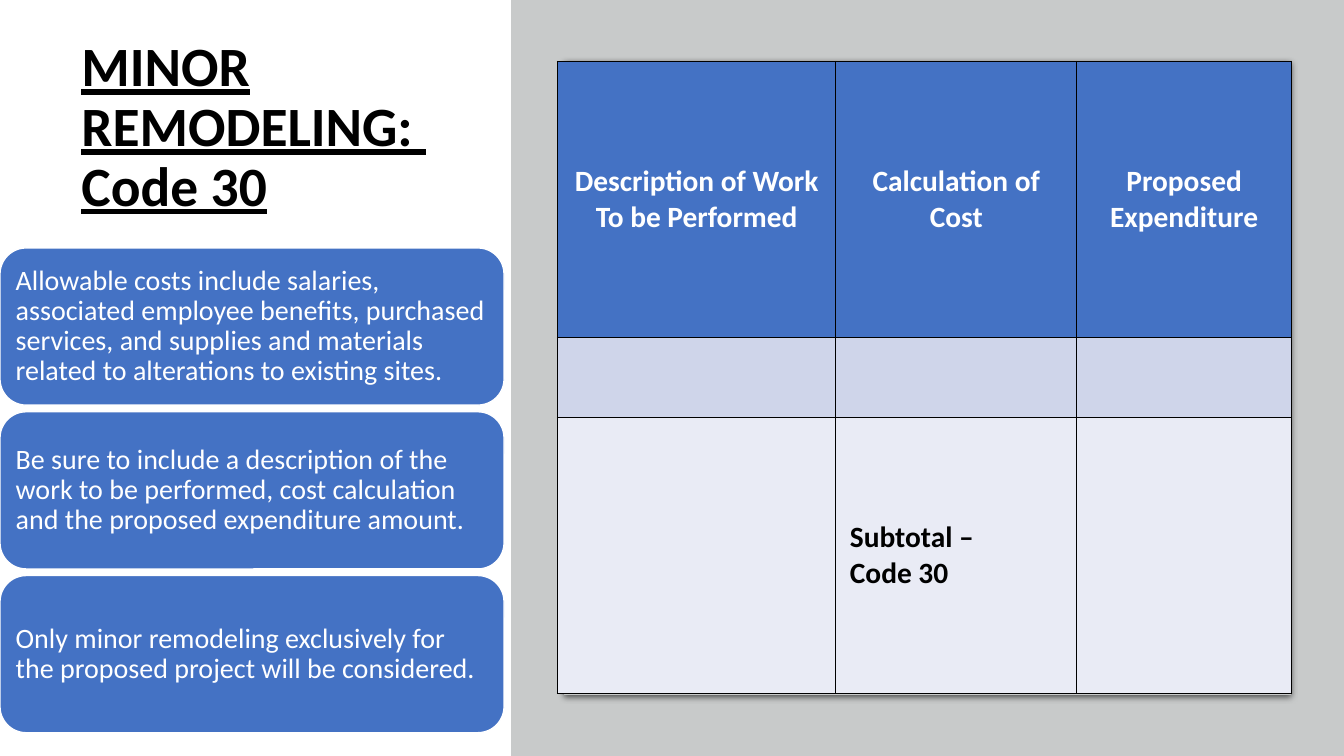
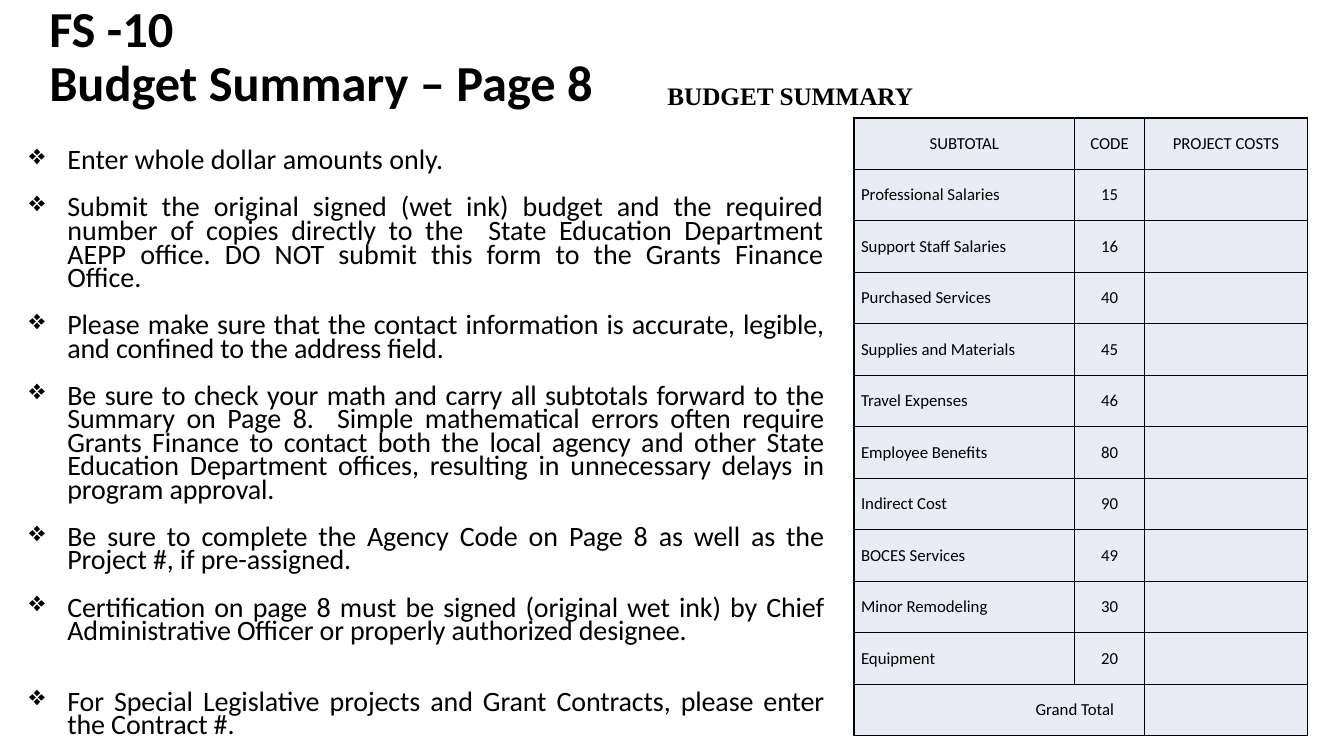
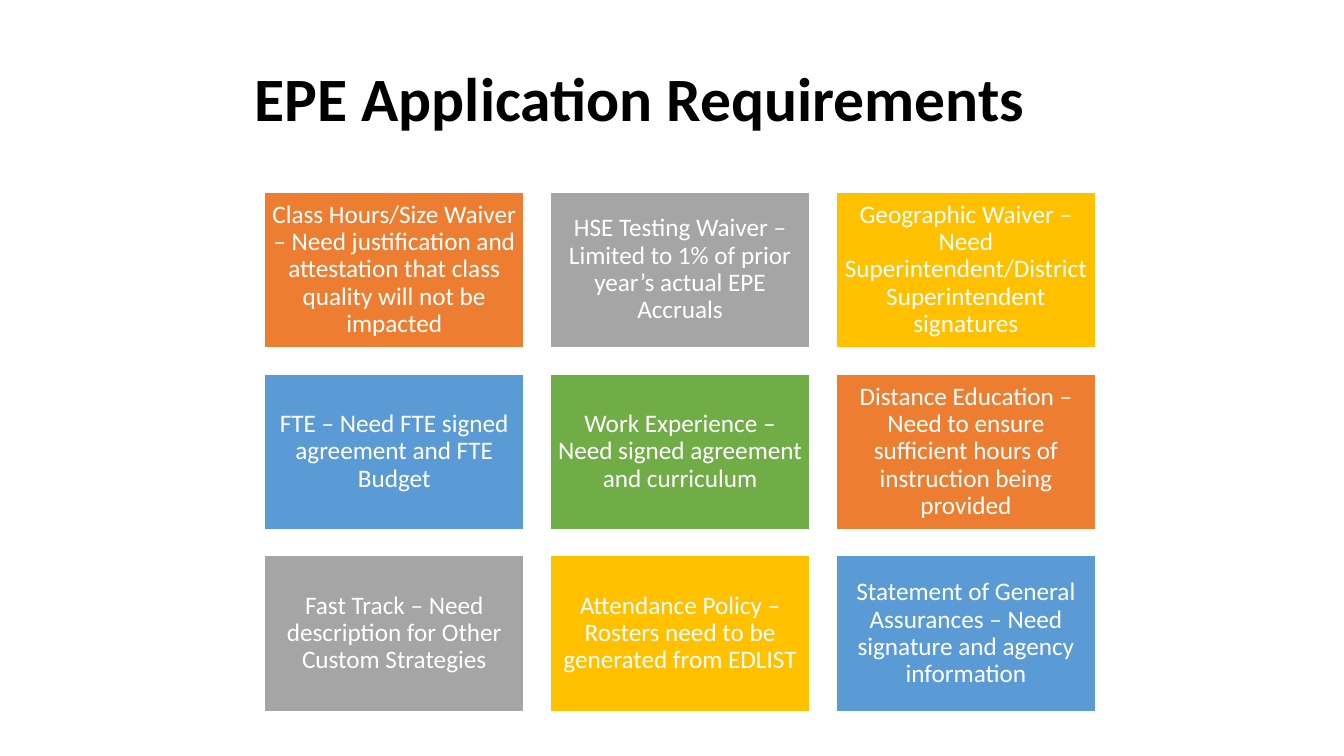
from dataclasses import dataclass
from typing import Any

from lxml import etree
from pptx import Presentation
from pptx.dml import color
from pptx.enum import shapes, text
from pptx.oxml import ns
from pptx.util import Inches, Pt

LEFT, MID, RIGHT, FULL = (
    text.PP_ALIGN.LEFT, text.PP_ALIGN.CENTER, text.PP_ALIGN.RIGHT, text.PP_ALIGN.JUSTIFY)
TOP, CENTER, LOW = (
    text.MSO_ANCHOR.TOP, text.MSO_ANCHOR.MIDDLE, text.MSO_ANCHOR.BOTTOM)
RECT = shapes.MSO_SHAPE.RECTANGLE
ROUND = shapes.MSO_SHAPE.ROUNDED_RECTANGLE


@dataclass(frozen=True)
class Theme:
    font: str = "Calibri"
    serif: str = "Times New Roman"
    black: str = "000000"
    white: str = "FFFFFF"
    panel: str = "C8CACA"
    blue: str = "4472C4"
    band: str = "CFD5EA"
    pale: str = "E9EBF5"
    orange: str = "ED7D31"
    gray: str = "A5A5A5"
    gold: str = "FFC000"
    sky: str = "5B9BD5"
    green: str = "70AD47"
    body: float = 20
    head: float = 21
    label: float = 18
    small: float = 12


T = Theme()


@dataclass(frozen=True)
class Box:
    x: float
    y: float
    w: float
    h: float

    def place(self) -> tuple[int, ...]:
        return tuple(Inches(n) for n in (self.x, self.y, self.w, self.h))


@dataclass(frozen=True)
class Tile:
    words: str
    fill: str


@dataclass(frozen=True)
class Point:
    words: str
    after: float = 16.8
    track: int = -10


@dataclass(frozen=True)
class Cost:
    name: str
    code: str


CARDS = [
    "Allowable costs include salaries, associated employee benefits, purchased services, "
    "and supplies and materials related to alterations to existing sites.",
    "Be sure to include a description of the work to be performed, cost calculation "
    "and the proposed expenditure amount.",
    "Only minor remodeling exclusively for the proposed project will be considered.",
]
HEADS = ["Description of Work\nTo be Performed", "Calculation of\nCost",
         "Proposed\nExpenditure"]
POINTS = [
    Point("Enter whole dollar amounts only.", track=0),
    Point("Submit the original signed (wet ink) budget and the required number of copies "
          "directly to the  State Education Department AEPP office. DO NOT submit this form "
          "to the Grants Finance Office.", track=0),
    Point("Please make sure that the contact information is accurate, legible, and confined "
          "to the address field."),
    Point("Be sure to check your math and carry all subtotals forward to the Summary on "
          "Page 8.  Simple mathematical errors often require Grants Finance to contact both "
          "the local agency and other State Education Department offices, resulting in "
          "unnecessary delays in program approval."),
    Point("Be sure to complete the Agency Code on Page 8 as well as the Project #, "
          "if pre-assigned."),
    Point("Certification on page 8 must be signed (original wet ink) by Chief "
          "Administrative Officer or properly authorized designee.", after=33.6),
    Point("For Special Legislative projects and Grant Contracts, please enter "
          "the Contract #.", after=0),
]
COSTS = [
    Cost("Professional Salaries", "15"),
    Cost("Support Staff Salaries", "16"),
    Cost("Purchased Services", "40"),
    Cost("Supplies and Materials", "45"),
    Cost("Travel Expenses", "46"),
    Cost("Employee Benefits", "80"),
    Cost("Indirect Cost", "90"),
    Cost("BOCES Services", "49"),
    Cost("Minor Remodeling", "30"),
    Cost("Equipment", "20"),
]
TILES = [
    Tile("Class Hours/Size Waiver – Need justification and attestation that class quality "
         "will not be impacted", T.orange),
    Tile("HSE Testing Waiver – Limited to 1% of prior year’s actual EPE Accruals", T.gray),
    Tile("Geographic Waiver – Need Superintendent/District Superintendent signatures", T.gold),
    Tile("FTE – Need FTE signed agreement and FTE Budget", T.sky),
    Tile("Work Experience – Need signed agreement and curriculum", T.green),
    Tile("Distance Education – Need to ensure sufficient hours of instruction being provided",
         T.orange),
    Tile("Fast Track – Need description for Other Custom Strategies", T.gray),
    Tile("Attendance Policy – Rosters need to be generated from EDLIST", T.gold),
    Tile("Statement of General Assurances – Need signature and agency information", T.sky),
]


def rgb(code: str) -> color.RGBColor:
    return color.RGBColor.from_string(code)


def node(base: Any, tag: str, **attrs: Any) -> Any:
    """Append a child in the drawing namespace."""
    return etree.SubElement(base, ns.qn(f"a:{tag}"), {k: str(v) for k, v in attrs.items()})


def write(frame: Any, words: str, *, size: float, tint: str = T.black, font: str = T.font,
          bold: bool = False, line: bool = False, align: Any = LEFT, lead: float = 1.0,
          after: float = 0, track: int = 0, more: bool = False) -> Any:
    """Write one paragraph per newline (a vertical tab breaks a line); return the last."""
    for i, part in enumerate(words.split("\n")):
        para = frame.add_paragraph() if more or i else frame.paragraphs[0]
        para.text = part
        para.alignment, para.line_spacing = align, lead
        para.space_before, para.space_after = Pt(0), Pt(after)
        for run in para.runs:
            run.font.name, run.font.size = font, Pt(size)
            run.font.bold, run.font.underline = bold, line
            run.font.color.rgb = rgb(tint)
            if track:
                run.font._element.set("spc", str(track))
    return para


def frame(slide: Any, box: Box, anchor: Any = TOP) -> Any:
    area = slide.shapes.add_textbox(*box.place()).text_frame
    area.word_wrap, area.vertical_anchor = True, anchor
    return area


def title(slide: Any, words: str, box: Box, size: float, anchor: Any = CENTER,
          line: bool = False) -> None:
    write(frame(slide, box, anchor), words, size=size, bold=True, line=line, lead=0.9)


def block(slide: Any, box: Box, fill: str, kind: Any = RECT, edge: str = "",
          width: float = 1) -> Any:
    shape = slide.shapes.add_shape(kind, *box.place())
    shape.shadow.inherit = False
    shape.fill.solid()
    shape.fill.fore_color.rgb = rgb(fill)
    if edge:
        shape.line.color.rgb, shape.line.width = rgb(edge), Pt(width)
    else:
        shape.line.fill.background()
    return shape


def card(slide: Any, box: Box, tile: Tile, size: float, pad: float, kind: Any = RECT,
         align: Any = MID, width: float = 1.5) -> None:
    """Draw a filled shape that holds its own text."""
    area = block(slide, box, tile.fill, kind, T.white, width).text_frame
    area.word_wrap, area.vertical_anchor = True, CENTER
    area.margin_left = area.margin_right = area.margin_top = area.margin_bottom = Inches(pad)
    write(area, tile.words, size=size, tint=T.white, align=align, lead=0.9)


def shade(shape: Any) -> None:
    """Give a shape a soft shadow straight below."""
    effect = shape._element.spPr.find(ns.qn("a:effectLst"))
    cast = node(effect, "outerShdw", blurRad=Pt(4.5), dist=Pt(1.5), dir=5400000)
    node(node(cast, "srgbClr", val=T.black), "alpha", val=63000)


def grid(slide: Any, box: Box, cols: list[float], rows: list[float]) -> Any:
    table = slide.shapes.add_table(len(rows), len(cols), *box.place()).table
    table.first_row = table.horz_banding = False
    for col, wide in zip(table.columns, cols):
        col.width = Inches(wide)
    for row, high in zip(table.rows, rows):
        row.height = Inches(high)
    return table


def cell(table: Any, row: int, col: int, fill: str, words: str = "", pad: float = 0.07,
         **form: Any) -> None:
    """Border and fill one cell, then write its text if any."""
    spot = table.cell(row, col)
    props = spot._tc.get_or_add_tcPr()
    for side in ("lnL", "lnR", "lnT", "lnB"):
        edge = node(props, side, w=Pt(1))
        node(node(edge, "solidFill"), "srgbClr", val=T.black)
    spot.fill.solid()
    spot.fill.fore_color.rgb = rgb(fill)
    spot.vertical_anchor = CENTER
    spot.margin_left = spot.margin_right = Inches(pad)
    spot.margin_top = spot.margin_bottom = 0
    if words:
        write(spot.text_frame, words, **form)


def minor(slide: Any) -> None:
    title(slide, "MINOR REMODELING:  Code 30", Box(0.71, 0.39, 3.83, 1.77), 39.6, line=True)
    block(slide, Box(5.07, 0, 8.26, 7.5), T.panel)
    shade(block(slide, Box(5.6, 0.61, 7.2, 6.28), T.white, edge=T.panel, width=0.75))
    table = grid(slide, Box(5.53, 0.61, 7.28, 6.28), [2.76, 2.39, 2.13], [2.74, 0.79, 2.74])
    for col, head in enumerate(HEADS):
        cell(table, 0, col, T.blue, head, 0.14, size=T.head, tint=T.white, bold=True,
             align=MID)
        cell(table, 1, col, T.band)
        cell(table, 2, col, T.pale, "Subtotal –\nCode 30" if col == 1 else "", 0.14,
             size=T.head, bold=True)
    for i, words in enumerate(CARDS):
        card(slide, Box(0, 2.46 + i * 1.625, 5, 1.56), Tile(words, T.blue), T.body, 0.08,
             ROUND, LEFT, 1)


def budget(slide: Any) -> None:
    title(slide, "FS -10\vBudget Summary – Page 8", Box(0.39, 0.11, 5.78, 1.06), 36, LOW)
    last = len(COSTS) + 1
    table = grid(slide, Box(8.47, 1.17, 4.5, 6.13), [2.19, 0.69, 1.62],
                 [6.13 / (last + 1)] * (last + 1))
    for col, head in enumerate(["SUBTOTAL", "CODE", "PROJECT COSTS"]):
        cell(table, 0, col, T.pale, head, size=T.small, align=MID)
    for row, cost in enumerate(COSTS, 1):
        cell(table, row, 0, T.pale, cost.name, size=T.small)
        cell(table, row, 1, T.pale, cost.code, size=T.small, align=MID)
        cell(table, row, 2, T.pale)
    table.cell(last, 0).merge(table.cell(last, 1))
    cell(table, last, 0, T.pale, "Grand Total", 0.3, size=T.small, align=RIGHT)
    for col in (1, 2):
        cell(table, last, col, T.pale)
    area = frame(slide, Box(0.19, 1.45, 8.0, 5.93))
    area.margin_right = Inches(0.02)
    for i, point in enumerate(POINTS):
        para = write(area, point.words, size=T.body, align=FULL, lead=0.7,
                     after=point.after, track=point.track, more=i > 0)
        props = para._p.get_or_add_pPr()
        props.set("marL", str(Inches(0.38)))
        props.set("indent", str(-Inches(0.38)))
        node(props, "buChar", char="❖")
    write(frame(slide, Box(6.52, 0.75, 5.78, 0.42)), "BUDGET SUMMARY", size=T.label,
          font=T.serif, bold=True)


def needs(slide: Any) -> None:
    title(slide, "EPE Application Requirements", Box(2.43, 0.28, 8.17, 1.45), 44)
    for i, tile in enumerate(TILES):
        row, col = divmod(i, 3)
        box = Box(2.62 + col * 2.835, 1.9 + row * 1.805, 2.58, 1.55)
        card(slide, box, tile, T.label, 0.07)


def main() -> None:
    deck = Presentation()
    deck.slide_width, deck.slide_height = Inches(13.33), Inches(7.5)
    for draw in (minor, budget, needs):
        draw(deck.slides.add_slide(deck.slide_layouts[6]))
    deck.save("out.pptx")


if __name__ == "__main__":
    main()
